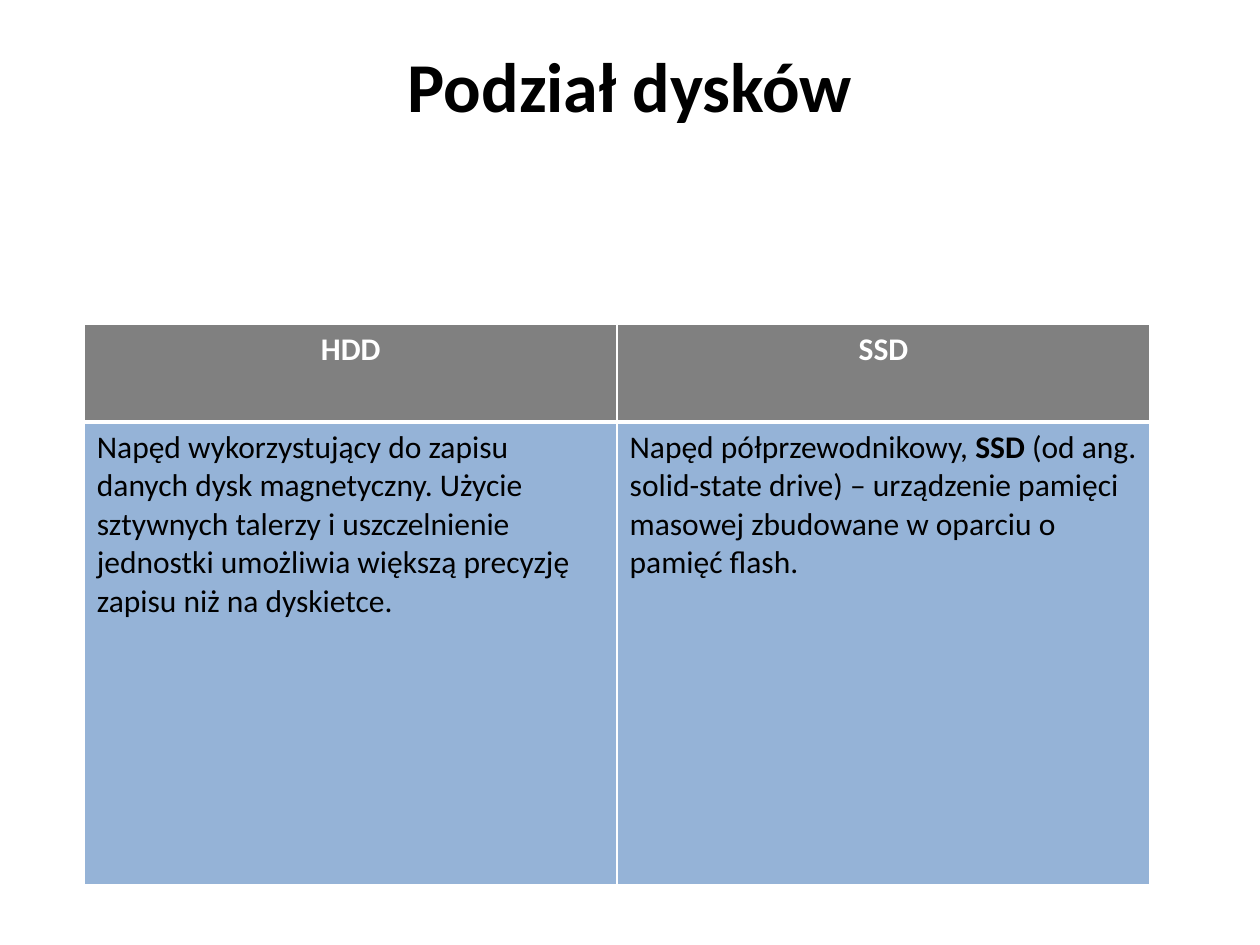
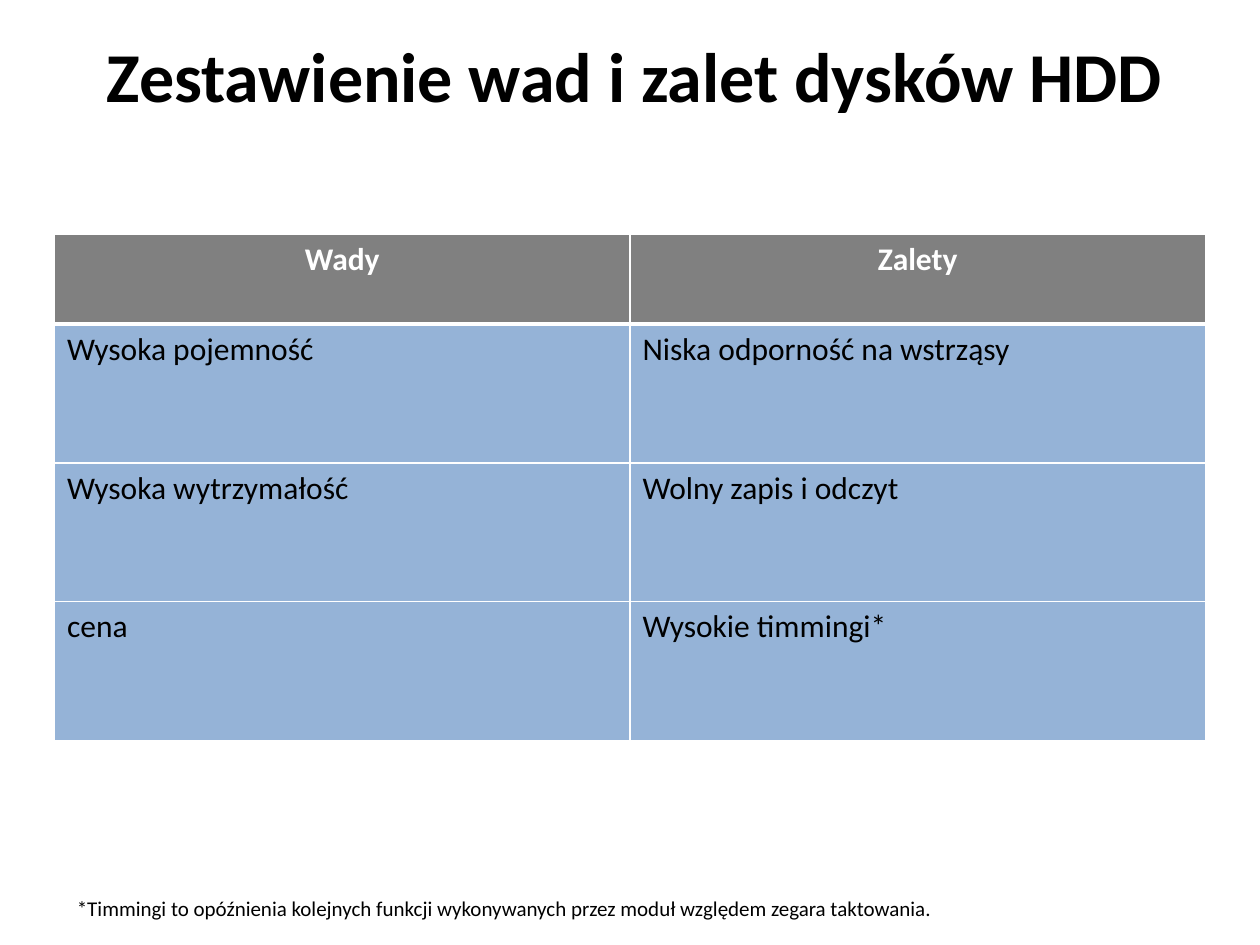
from lxml import etree
from pptx import Presentation
from pptx.dml.color import RGBColor
from pptx.enum import text
from pptx.oxml.ns import qn
from pptx.util import Cm, Pt

# Content: a text is a list of (words, bold) spans; the first table row is the header
SLIDES = [
    {
        "title": ("Podział dysków", (4.7, 0.74, 16, 1.96)),
        "table": {
            "corner": (1.7, 6.53),
            "column": 10.74,
            "heights": (1.98, 9.33),
            "rows": [
                ("HDD", "SSD"),
                (
                    "Napęd wykorzystujący do zapisu danych dysk magnetyczny. "
                    "Użycie sztywnych talerzy i uszczelnienie jednostki umożliwia "
                    "większą precyzję zapisu niż na dyskietce.",
                    [
                        ("Napęd półprzewodnikowy, ", False),
                        ("SSD", True),
                        (" (od ang. solid-state drive) – urządzenie pamięci masowej "
                         "zbudowane w oparciu o pamięć flash.", False),
                    ],
                ),
            ],
        },
    },
    {
        "title": ("Zestawienie wad i zalet dysków HDD", (1.09, 0.53, 23.4, 1.96)),
        "table": {
            "corner": (1.1, 4.73),
            "column": 11.6,
            "heights": (1.8, 2.8),
            "rows": [
                ("Wady", "Zalety"),
                ("Wysoka pojemność", "Niska odporność na wstrząsy"),
                ("Wysoka wytrzymałość", "Wolny zapis i odczyt"),
                ("cena", "Wysokie timmingi*"),
            ],
        },
        "footnote": (
            "*Timmingi to opóźnienia kolejnych funkcji wykonywanych "
            "przez moduł względem zegara taktowania.",
            (1.3, 17.93, 18.4, 0.77),
        ),
    },
]

# Shared look
BLACK = RGBColor(0x00, 0x00, 0x00)
WHITE = RGBColor(0xFF, 0xFF, 0xFF)
HEADER_GREY = RGBColor(0x80, 0x80, 0x80)
BODY_BLUE = RGBColor(0x95, 0xB3, 0xD7)
FONT = "Calibri"
CENTER, LEFT = text.PP_ALIGN.CENTER, text.PP_ALIGN.LEFT
TITLE = {"size": Pt(40), "bold": True, "color": BLACK, "align": CENTER}
FOOTNOTE = {"size": Pt(12), "bold": False, "color": BLACK, "align": LEFT}
HEADER = {"size": Pt(18), "bold": True, "color": WHITE, "align": CENTER}
BODY = {"size": Pt(18), "bold": False, "color": BLACK, "align": LEFT}


def write(frame, content, style):
    """Fill a text frame with one paragraph of styled spans."""
    para = frame.paragraphs[0]
    para.alignment = style["align"]
    spans = [(content, style["bold"])] if isinstance(content, str) else content
    for words, bold in spans:
        span = para.add_run()
        span.text = words
        span.font.color.rgb = style["color"]
        for name, value in {"name": FONT, "size": style["size"], "bold": bold}.items():
            setattr(span.font, name, value)


def add_text(page, content, place, style):
    box = page.shapes.add_textbox(*map(Cm, place))
    box.text_frame.word_wrap = True
    write(box.text_frame, content, style)


def add_borders(cell, bottom):
    """Draw white cell borders; bottom is the lower line's width in points."""
    props = cell._tc.get_or_add_tcPr()
    for side, width in {"L": 1, "R": 1, "T": 1, "B": bottom}.items():
        line = etree.SubElement(props, qn(f"a:ln{side}"), w=str(Pt(width)))
        fill = etree.SubElement(line, qn("a:solidFill"))
        etree.SubElement(fill, qn("a:srgbClr"), val=str(WHITE))


def add_table(page, corner, column, heights, rows):
    header_height, body_height = heights
    columns = len(rows[0])
    total = header_height + body_height * (len(rows) - 1)
    table = page.shapes.add_table(
        len(rows), columns, *map(Cm, (*corner, column * columns, total))
    ).table
    for track in table.columns:
        track.width = Cm(column)
    for i, row in enumerate(rows):
        is_header = i == 0
        table.rows[i].height = Cm(header_height if is_header else body_height)
        for j, content in enumerate(row):
            cell = table.cell(i, j)
            add_borders(cell, 3 if is_header else 1)
            cell.fill.solid()
            cell.fill.fore_color.rgb = HEADER_GREY if is_header else BODY_BLUE
            write(cell.text_frame, content, HEADER if is_header else BODY)


def main():
    deck = Presentation()
    deck.slide_width, deck.slide_height = Cm(25.4), Cm(19.05)
    for content in SLIDES:
        page = deck.slides.add_slide(deck.slide_layouts[6])
        add_text(page, *content["title"], TITLE)
        add_table(page, **content["table"])
        if "footnote" in content:
            add_text(page, *content["footnote"], FOOTNOTE)
    deck.save("out.pptx")


if __name__ == "__main__":
    main()
